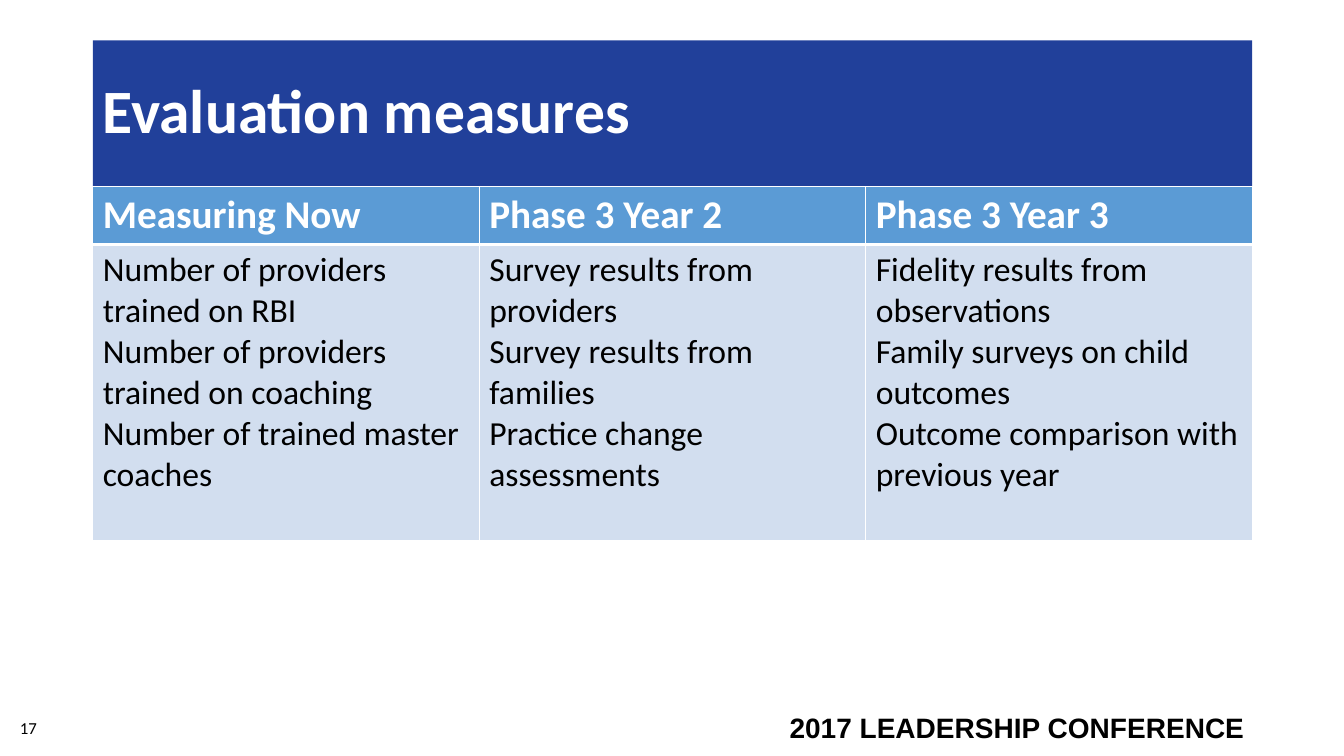
"""Build the evaluation measures slide with its three-column table."""
from lxml.etree import SubElement
from pptx import Presentation
from pptx.dml.color import RGBColor
from pptx.enum.text import MSO_ANCHOR, MSO_AUTO_SIZE, PP_ALIGN
from pptx.oxml.ns import qn
from pptx.util import Inches, Pt

COLORS = {"navy": "21409A", "blue": "5B9BD5", "pale": "D2DEEF",
          "white": "FFFFFF", "black": "000000"}
LEFT, TOP, WIDE, BAND = 0.92, 0.4, 11.5, 1.45
ROWS = [0.57, 2.94]
PLANS = {
    "Measuring Now": ["Number of providers trained on RBI",
                      "Number of providers trained on coaching",
                      "Number of trained master coaches"],
    "Phase 3 Year 2": ["Survey results from providers",
                       "Survey results from families",
                       "Practice change assessments"],
    "Phase 3 Year 3": ["Fidelity results from observations",
                       "Family surveys on child outcomes",
                       "Outcome comparison with previous year"],
}


def style(frame, size, color, bold=False, face="Calibri", align=PP_ALIGN.LEFT):
    """Format every run of a text frame."""
    for para in frame.paragraphs:
        para.alignment = align
        for run in para.runs:
            run.font.name, run.font.size, run.font.bold = face, Pt(size), bold
            run.font.color.rgb = RGBColor.from_string(COLORS[color])


def edge(cell, base):
    """Draw white cell borders, with the bottom one of the given width."""
    props = cell._tc.get_or_add_tcPr()
    for spot, (side, width) in enumerate(
            [("lnL", 1), ("lnR", 1), ("lnT", 1), ("lnB", base)]):
        line = SubElement(props, qn(f"a:{side}"), w=str(Pt(width)))
        fill = SubElement(line, qn("a:solidFill"))
        SubElement(fill, qn("a:srgbClr"), val=COLORS["white"])
        props.insert(spot, line)


deck = Presentation()
deck.slide_width, deck.slide_height = Inches(13.33), Inches(7.5)
slide = deck.slides.add_slide(deck.slide_layouts[5])

title = slide.shapes.title
title.left, title.top = Inches(LEFT), Inches(TOP)
title.width, title.height = Inches(WIDE), Inches(BAND)
title.fill.solid()
title.fill.fore_color.rgb = RGBColor.from_string(COLORS["navy"])
title.text_frame.text = "Evaluation measures"
title.text_frame.auto_size = MSO_AUTO_SIZE.NONE
title.text_frame.vertical_anchor = MSO_ANCHOR.MIDDLE
title.text_frame.paragraphs[0].line_spacing = 0.9
style(title.text_frame, 44, "white", bold=True)

table = slide.shapes.add_table(
    len(ROWS), len(PLANS), Inches(LEFT), Inches(TOP + BAND),
    Inches(WIDE), Inches(sum(ROWS))).table
for row, tall in zip(table.rows, ROWS):
    row.height = Inches(tall)
for col, (head, goals) in enumerate(PLANS.items()):
    for row, (text, size, ink, back, base) in enumerate([
            (head, 28, "white", "blue", 3),
            ("\n".join(goals), 24, "black", "pale", 1)]):
        cell = table.cell(row, col)
        cell.text_frame.text = text
        style(cell.text_frame, size, ink, bold=row == 0)
        cell.fill.solid()
        cell.fill.fore_color.rgb = RGBColor.from_string(COLORS[back])
        edge(cell, base)

for text, box, size, bold, face, align, anchor in [
        ("2017 LEADERSHIP CONFERENCE", (7.52, 7, 4.92, 0.42), 20, True,
         "Arial", PP_ALIGN.RIGHT, MSO_ANCHOR.TOP),
        ("17", (0.1, 7.02, 3, 0.4), 12, False,
         "Calibri", PP_ALIGN.LEFT, MSO_ANCHOR.MIDDLE)]:
    frame = slide.shapes.add_textbox(*map(Inches, box)).text_frame
    frame.word_wrap = True
    frame.vertical_anchor = anchor
    frame.text = text
    style(frame, size, "black", bold, face, align)

deck.save("out.pptx")
